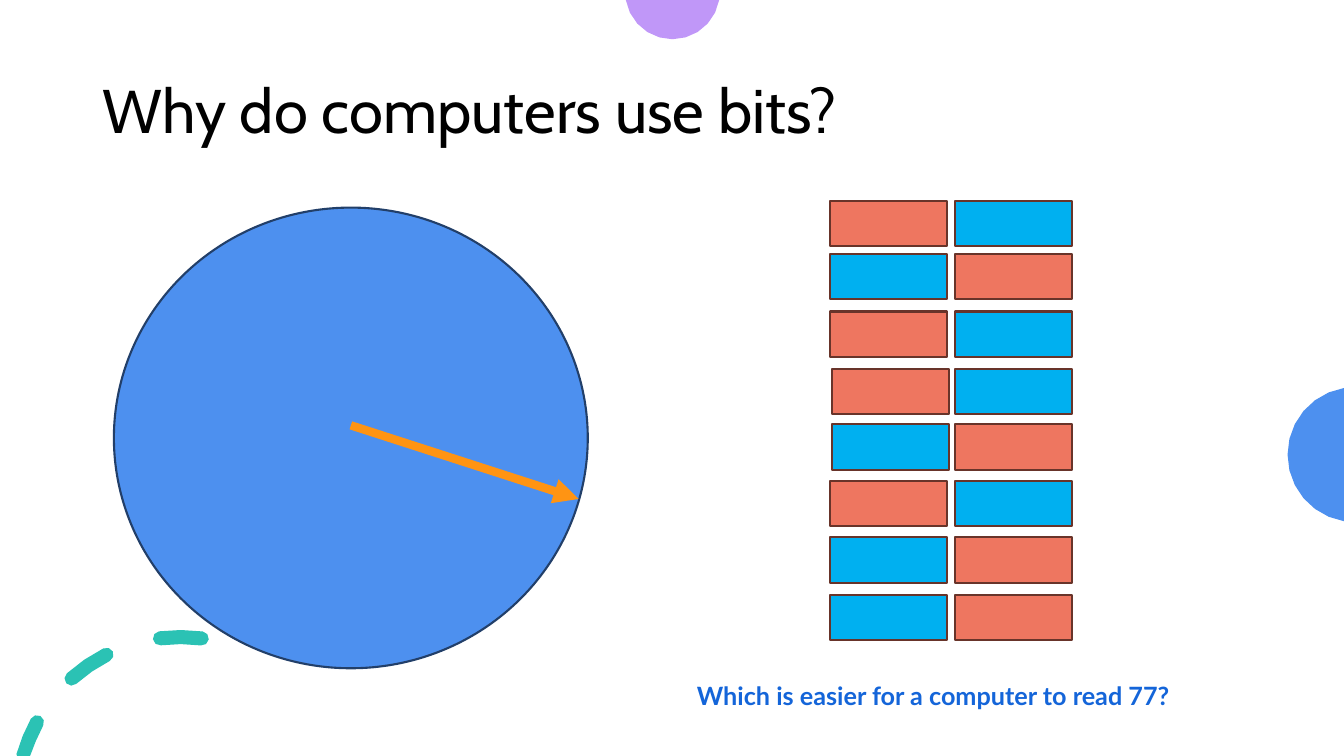
from math import cos, radians, sin

from lxml import etree
from pptx import Presentation
from pptx.dml.color import RGBColor
from pptx.enum.shapes import MSO_CONNECTOR, MSO_SHAPE
from pptx.enum.text import MSO_ANCHOR, PP_ALIGN
from pptx.oxml.ns import qn
from pptx.util import Inches, Pt

LINE = MSO_CONNECTOR.STRAIGHT
RECT, OVAL = MSO_SHAPE.RECTANGLE, MSO_SHAPE.OVAL
TOP, MIDDLE = MSO_ANCHOR.TOP, MSO_ANCHOR.MIDDLE
LEFT, CENTER = PP_ALIGN.LEFT, PP_ALIGN.CENTER
WIDE, HIGH = 13.33, 7.5
COLORS = {
    "black": "000000", "purple": "C097F8", "teal": "2BC2B4",
    "blue": "4D90EF", "navy": "223F69", "orange": "FF9413",
    "coral": "EE7660", "brown": "68342A", "sky": "00B0F0", "link": "1465D9",
}
BITS = [
    (0, 8.23, 1.99), (1, 8.23, 2.52), (0, 8.23, 3.09), (0, 8.25, 3.66),
    (1, 8.25, 4.21), (0, 8.23, 4.77), (1, 8.23, 5.33), (1, 8.23, 5.9),
]


def color(name):
    """Return the palette colour with this name."""
    return RGBColor.from_string(COLORS[name])


def arc(x, y, radius, start, end, steps):
    """Return points along an arc, with angles in degrees clockwise from the right."""
    turns = [radians(start + (end - start) * i / steps) for i in range(steps + 1)]
    return [(x + radius * cos(t), y + radius * sin(t)) for t in turns]


def dash(x, y, radius, start, end, half=0.07):
    """Return the outline of a curved dash with round ends, cut at the slide foot."""
    first, last = (arc(x, y, radius, a, a, 1)[0] for a in (start, end))
    points = arc(*first, half, start + 180, start + 360, 4)
    points += arc(x, y, radius + half, start, end, 2)[1:-1]
    points += arc(*last, half, end, end + 180, 4)
    points += arc(x, y, radius - half, end, start, 2)[1:-1]
    return [(px, min(py, HIGH)) for px, py in points]


class Deck:
    """Hold the style and the current slide."""

    def __init__(self):
        """Start a deck with one blank slide."""
        self.deck = Presentation()
        self.deck.slide_width, self.deck.slide_height = Inches(WIDE), Inches(HIGH)
        self.slide = self.deck.slides.add_slide(self.deck.slide_layouts[6])
        self.shapes = self.slide.shapes

    def paint(self, shape, fill, line=None):
        """Set fill and outline and drop the shadow."""
        shape.shadow.inherit = False
        shape.fill.solid()
        shape.fill.fore_color.rgb = color(fill)
        if line:
            shape.line.color.rgb = color(line)
            shape.line.width = Pt(1.5)
        else:
            shape.line.fill.background()

    def shape(self, kind, box, fill, line):
        """Add a preset shape."""
        self.paint(self.shapes.add_shape(kind, *map(Inches, box)), fill, line)

    def form(self, paths, fill):
        """Add one freeform made of closed outlines."""
        paths = [[(Inches(x), Inches(y)) for x, y in path] for path in paths]
        pen = self.shapes.build_freeform(*paths[0][0])
        pen.add_line_segments(paths[0][1:])
        for path in paths[1:]:
            pen.move_to(*path[0])
            pen.add_line_segments(path[1:])
        self.paint(pen.convert_to_shape(), fill)

    def arrow(self, start, end, tint, width):
        """Add a straight arrow."""
        line = self.shapes.add_connector(LINE, *map(Inches, start + end))
        line.line.color.rgb = color(tint)
        line.line.width = Pt(width)
        stroke = line._element.spPr.find(qn("a:ln"))
        etree.SubElement(stroke, qn("a:tailEnd"), type="triangle")
        etree.SubElement(line._element.spPr, qn("a:effectLst"))

    def text(self, words, box, font, size, tint, bold=False, align=LEFT,
             anchor=TOP, space=1.0):
        """Add a wrapped text box."""
        frame = self.shapes.add_textbox(*map(Inches, box)).text_frame
        frame.word_wrap = True
        frame.vertical_anchor = anchor
        para = frame.paragraphs[0]
        para.alignment, para.line_spacing = align, space
        run = para.add_run()
        run.text = words
        run.font.name, run.font.size, run.font.bold = font, Pt(size), bold
        run.font.color.rgb = color(tint)


def main():
    """Build and save the slide."""
    deck = Deck()
    deck.form([arc(6.67, -0.08, 0.47, 10, 170, 10)], "purple")
    spans = [(195.8, 208.6), (228.2, 243.1), (262.8, 277.5)]
    deck.form([dash(1.79, 7.94, 1.62, *span) for span in spans], "teal")
    deck.form([arc(13.44, 4.51, 0.67, 99.5, 260.5, 12)], "blue")
    deck.text("Why do computers use bits?", (0.92, 0.4, 11.5, 1.45),
              "Cabin", 44, "black", anchor=MIDDLE, space=0.9)
    deck.shape(OVAL, (1.13, 2.06, 4.7, 4.57), "blue", "navy")
    deck.arrow((3.48, 4.22), (5.74, 4.95), "orange", 6)
    for bit, left, top in BITS:
        pair = ("sky", "coral") if bit else ("coral", "sky")
        for x, fill in zip((left, 9.47), pair):
            deck.shape(RECT, (x, top, 1.16, 0.45), fill, "brown")
    deck.text("Which is easier for a computer to read 77?", (6.36, 6.7, 5.79, 0.4),
              "Lato", 18, "link", bold=True, align=CENTER)
    deck.deck.save("out.pptx")


if __name__ == "__main__":
    main()
